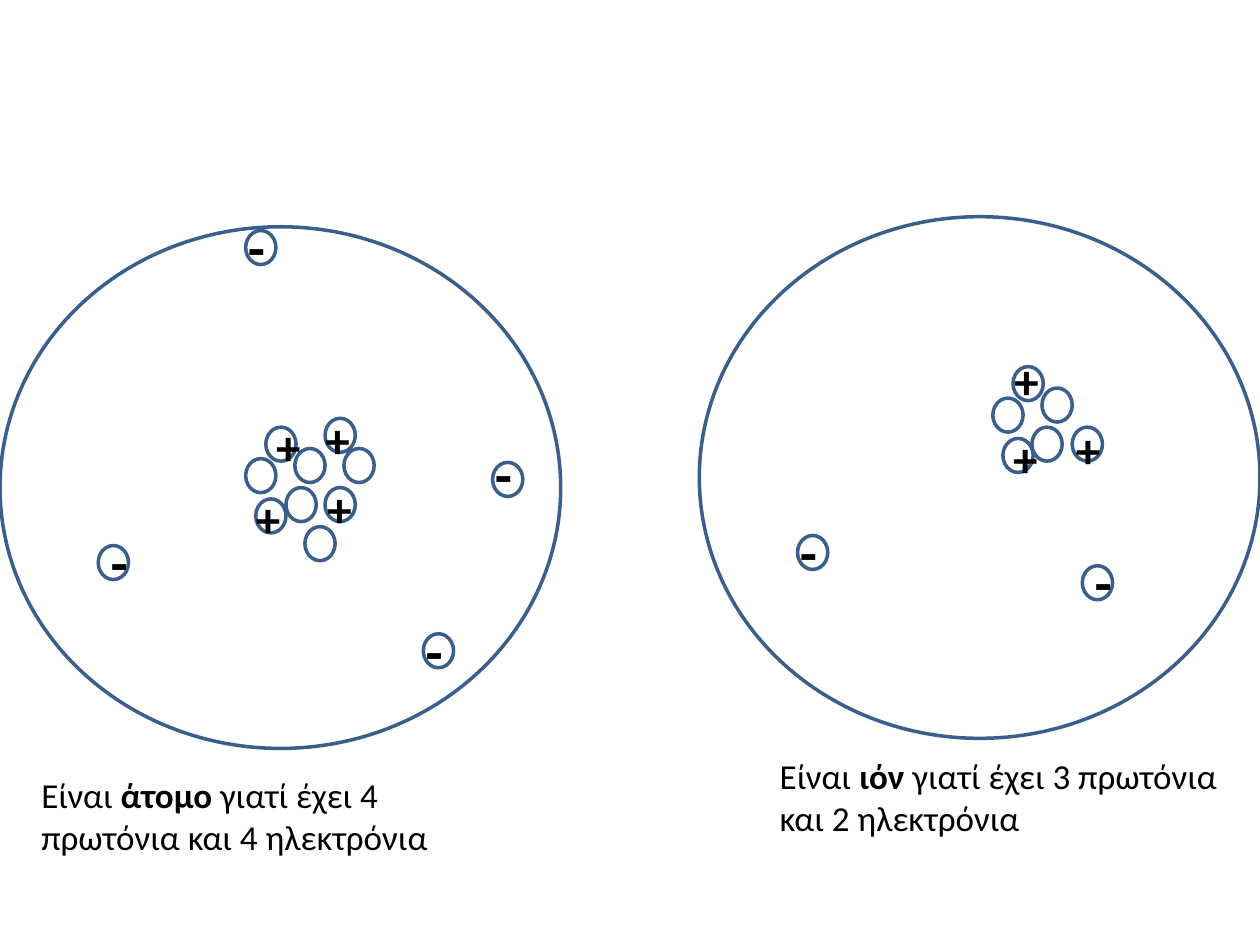
from pptx import Presentation
from pptx.dml.color import RGBColor
from pptx.enum.shapes import MSO_SHAPE
from pptx.enum.text import MSO_AUTO_SIZE
from pptx.util import Inches, Pt

ORBIT_SIZE = (4.45, 4.14)
PARTICLE_SIZE = (0.24, 0.27)
CAPTION_SIZE = (3.67, 0.77)
MINUS_BOX = (0.3, 0.64)
PLUS_BOX = (0.3, 0.57)
NARROW_PLUS_BOX = (0.18, 0.57)
SMALL_PLUS_BOX = (0.18, 0.49)

# Protons and electrons: circle position, sign position, sign box size.
ATOM = {
    "orbit": (0, 1.8),
    "neutrons": [(2.27, 3.87), (2.73, 3.56), (2.34, 3.56), (1.95, 3.64), (2.42, 4.18)],
    "protons": [
        ((2.03, 3.96), (1.95, 3.83), SMALL_PLUS_BOX),
        ((2.11, 3.39), (2.11, 3.26), SMALL_PLUS_BOX),
        ((2.58, 3.32), (2.5, 3.2), NARROW_PLUS_BOX),
        ((2.58, 3.87), (2.5, 3.75), PLUS_BOX),
    ],
    "electrons": [
        ((0.78, 4.33), (0.78, 4.14), MINUS_BOX),
        ((1.95, 1.83), (1.87, 1.64), MINUS_BOX),
        ((3.36, 5.03), (3.28, 4.84), MINUS_BOX),
        ((3.91, 3.67), (3.83, 3.44), MINUS_BOX),
    ],
    "caption": (0.23, 6.09),
    "words": ("Είναι ", "άτομο", " γιατί έχει 4 πρωτόνια και 4 ηλεκτρόνια"),
}
ION = {
    "orbit": (5.55, 1.72),
    "neutrons": [(8.19, 3.39), (8.27, 3.08), (7.88, 3.16)],
    "protons": [
        ((7.96, 3.48), (7.96, 3.35), SMALL_PLUS_BOX),
        ((8.04, 2.91), (7.97, 2.73), SMALL_PLUS_BOX),
        ((8.51, 3.39), (8.44, 3.28), PLUS_BOX),
    ],
    "electrons": [
        ((6.33, 4.25), (6.25, 4.06), MINUS_BOX),
        ((8.59, 4.49), (8.59, 4.3), MINUS_BOX),
    ],
    "caption": (6.09, 5.94),
    "words": ("Είναι ", "ιόν", " γιατί έχει 3 πρωτόνια και 2 ηλεκτρόνια"),
}


def color(value):
    return RGBColor.from_string(value)


class ParticleSlide:
    line_color = "3A5F8C"
    text_color = "000000"
    font_name = "Calibri"

    def __init__(self, slide):
        self.slide = slide

    def circle(self, position, size):
        shape = self.slide.shapes.add_shape(
            MSO_SHAPE.OVAL, *map(Inches, position + size))
        shape.shadow.inherit = False
        shape.fill.background()
        shape.line.color.rgb = color(self.line_color)
        shape.line.width = Pt(2)

    def text(self, position, size, runs, points):
        """Add a text box; runs are pairs of words and a bold flag."""
        box = self.slide.shapes.add_textbox(*map(Inches, position + size))
        frame = box.text_frame
        frame.word_wrap = True
        frame.auto_size = MSO_AUTO_SIZE.SHAPE_TO_FIT_TEXT
        for words, bold in runs:
            run = frame.paragraphs[0].add_run()
            run.text = words
            style = {"name": self.font_name, "size": Pt(points), "bold": bold}
            for name, value in style.items():
                setattr(run.font, name, value)
            run.font.color.rgb = color(self.text_color)

    def charged_particles(self, particles, sign, points):
        for position, sign_position, sign_size in particles:
            self.circle(position, PARTICLE_SIZE)
            self.text(sign_position, sign_size, [(sign, True)], points)

    def model(self, data):
        """Draw one orbit with its particles and caption."""
        self.circle(data["orbit"], ORBIT_SIZE)
        for position in data["neutrons"]:
            self.circle(position, PARTICLE_SIZE)
        self.charged_particles(data["protons"], "+", 28)
        self.charged_particles(data["electrons"], "-", 32)
        runs = zip(data["words"], (False, True, False))
        self.text(data["caption"], CAPTION_SIZE, runs, 20)


def main():
    presentation = Presentation()
    presentation.slide_width = Inches(10)
    presentation.slide_height = Inches(7.5)
    blank_layout = presentation.slide_layouts[6]
    page = ParticleSlide(presentation.slides.add_slide(blank_layout))
    for data in (ATOM, ION):
        page.model(data)
    presentation.save("out.pptx")


if __name__ == "__main__":
    main()
